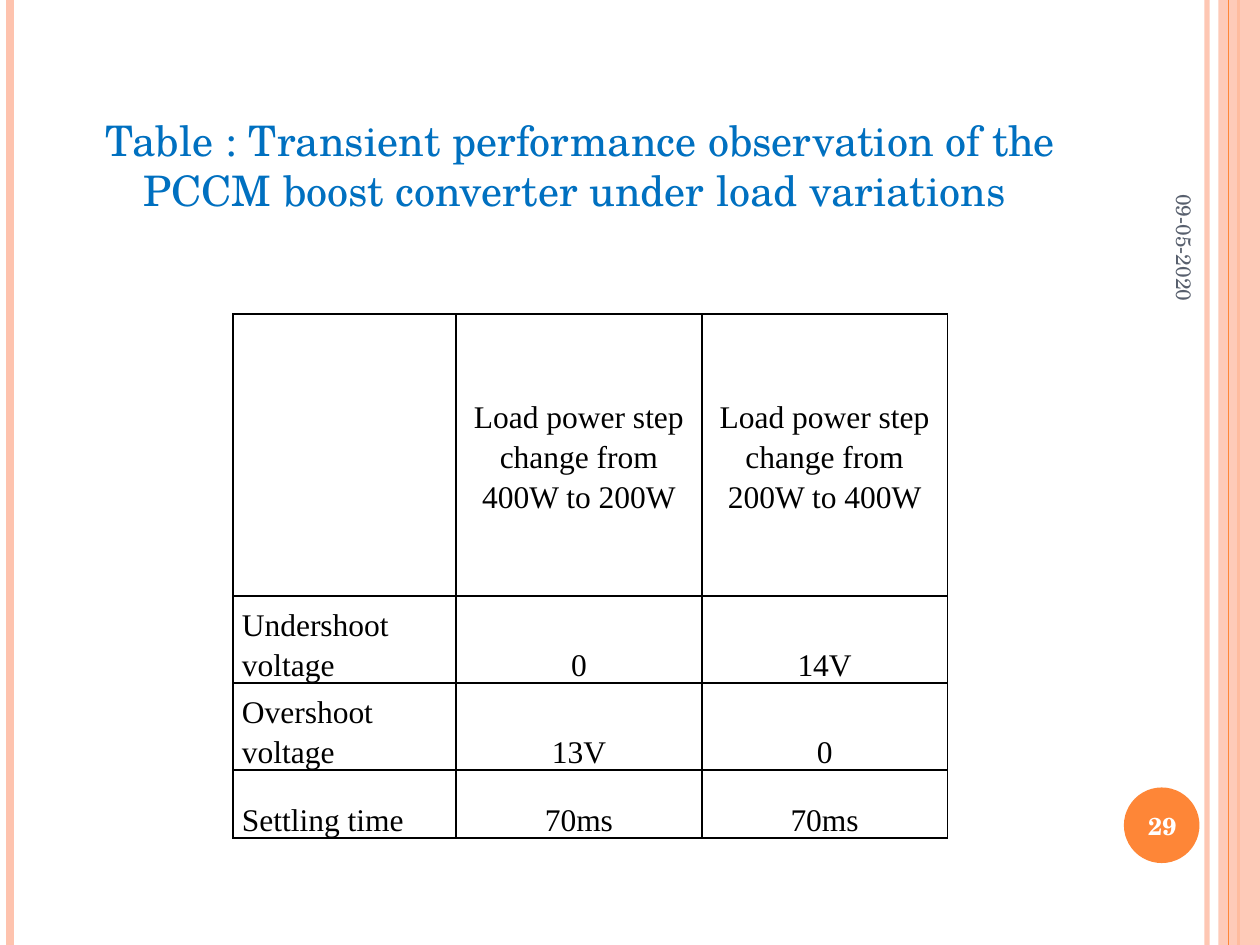
from dataclasses import dataclass

from lxml import etree
from pptx import Presentation
from pptx.dml.color import RGBColor
from pptx.enum.shapes import MSO_CONNECTOR, MSO_SHAPE
from pptx.enum.text import MSO_ANCHOR, MSO_AUTO_SIZE, PP_ALIGN
from pptx.oxml.ns import qn
from pptx.util import Inches, Pt

STRAIGHT = MSO_CONNECTOR.STRAIGHT
RECTANGLE, OVAL = MSO_SHAPE.RECTANGLE, MSO_SHAPE.OVAL
LEFT, CENTER, RIGHT = PP_ALIGN.LEFT, PP_ALIGN.CENTER, PP_ALIGN.RIGHT
MIDDLE, BOTTOM = MSO_ANCHOR.MIDDLE, MSO_ANCHOR.BOTTOM
NO_AUTOFIT = MSO_AUTO_SIZE.NONE
TITLE_ONLY = 5


@dataclass(frozen=True)
class Theme:
    """Colours, fonts and type sizes of the deck."""
    peach: str = "FEC3AE"
    orange: str = "FE8637"
    blue: str = "0070C0"
    slate: str = "575F6D"
    black: str = "000000"
    white: str = "FFFFFF"
    heading_font: str = "TeX Gyre Schola"
    table_font: str = "Times New Roman"
    title_size: int = 24
    table_size: int = 18
    number_size: int = 14
    date_size: int = 12


THEME = Theme()
ROWS = [
    ["", "Load power step change from 400W to 200W", "Load power step change from 200W to 400W"],
    ["Undershoot voltage", "0", "14V"],
    ["Overshoot voltage", "13V", "0"],
    ["Settling time", "70ms", "70ms"],
]


def set_opacity(element, percent):
    """Make every plain colour inside the element partly transparent."""
    for color in element.iter(qn("a:srgbClr")):
        etree.SubElement(color, qn("a:alpha"), val=str(percent * 1000))


def write(frame, text, font, size, color, align, anchor, bold=False):
    """Put one formatted paragraph into a text frame and return it."""
    frame.text = text
    frame.word_wrap = True
    frame.vertical_anchor = anchor
    para = frame.paragraphs[0]
    para.alignment = align
    for span in para.runs:
        span.font.name = font
        span.font.size = Pt(size)
        span.font.bold = bold
        span.font.color.rgb = RGBColor.from_string(color)
    return para


def add_stripe(page, x, top, height, color, width, opacity=100):
    """Draw one vertical stripe."""
    stripe = page.shapes.add_connector(
        STRAIGHT, Inches(x), Inches(top), Inches(x), Inches(top + height))
    stripe.line.color.rgb = RGBColor.from_string(color)
    stripe.line.width = Pt(width)
    if opacity < 100:
        set_opacity(stripe.line._get_or_add_ln(), opacity)
    etree.SubElement(stripe._element.spPr, qn("a:effectLst"))


def add_solid(page, kind, box, color):
    """Draw a filled shape without an outline."""
    shape = page.shapes.add_shape(kind, *map(Inches, box))
    shape.shadow.inherit = False
    shape.fill.solid()
    shape.fill.fore_color.rgb = RGBColor.from_string(color)
    shape.line.fill.background()
    return shape


def add_frame(page, box):
    """Draw the stripes along both edges of the page."""
    left, top, width, height = box
    right = left + width
    add_stripe(page, right - 0.42, top, height, THEME.peach, 3, 93)
    add_stripe(page, left + 0.08, top, height, THEME.peach, 4.5)
    add_stripe(page, right - 0.17, top, height, THEME.orange, 1.5)
    band = add_solid(page, RECTANGLE, (right - 0.33, top, 0.33, height), THEME.peach)
    set_opacity(band._element.spPr, 87)
    add_stripe(page, right - 0.25, top, height, THEME.orange, 0.75)


def add_title(page, box, text):
    """Place the title placeholder in the box."""
    title = page.shapes.title
    title.left, title.top, title.width, title.height = map(Inches, box)
    write(title.text_frame, text, THEME.heading_font, THEME.title_size,
          THEME.blue, CENTER, MIDDLE)
    title.text_frame.auto_size = NO_AUTOFIT


def add_date(page, box, text):
    """Place the date, turned to read downwards."""
    date = page.shapes.add_textbox(*map(Inches, box))
    date.rotation = 90
    write(date.text_frame, text, THEME.heading_font, THEME.date_size,
          THEME.slate, RIGHT, MIDDLE)


def add_page_number(page, box, text):
    """Place the page number on its round badge."""
    left, top, width, height = box
    add_solid(page, OVAL, box, THEME.orange)
    number = page.shapes.add_textbox(
        Inches(left - 0.03), Inches(top + 0.02), Inches(width + 0.07), Inches(height - 0.03))
    write(number.text_frame, text, THEME.heading_font, THEME.number_size,
          THEME.white, CENTER, MIDDLE, bold=True)


def add_borders(cell):
    """Give a cell a thin black border on all sides."""
    properties = cell._tc.get_or_add_tcPr()
    for place, side in enumerate(("a:lnL", "a:lnR", "a:lnT", "a:lnB")):
        line = etree.Element(qn(side), w=str(Pt(1)))
        fill = etree.SubElement(line, qn("a:solidFill"))
        etree.SubElement(fill, qn("a:srgbClr"), val=THEME.black)
        properties.insert(place, line)


def add_results(page, box, rows):
    """Place the table of results in the box."""
    left, top, width, height = box
    table = page.shapes.add_table(len(rows), len(rows[0]), *map(Inches, box)).table
    table.first_row = table.horz_banding = False
    value_width, row_height = 1.95, 0.54
    for index, column in enumerate(table.columns):
        column.width = Inches(value_width if index else width - 2 * value_width)
    for index, row in enumerate(table.rows):
        row.height = Inches(row_height if index else height - 3 * row_height)
    for row_index, texts in enumerate(rows):
        for column_index, text in enumerate(texts):
            cell = table.cell(row_index, column_index)
            para = write(cell.text_frame, text, THEME.table_font, THEME.table_size,
                         THEME.black, CENTER if column_index else LEFT, MIDDLE)
            para.line_spacing = 1.15
            cell.vertical_anchor = BOTTOM if row_index else MIDDLE
            cell.margin_left = cell.margin_right = Inches(0.07)
            cell.margin_top = cell.margin_bottom = 0
            cell.fill.background()
            add_borders(cell)


def main():
    """Build the deck and save it."""
    deck = Presentation()
    deck.slide_width, deck.slide_height = Inches(10), Inches(7.5)
    page = deck.slides.add_slide(deck.slide_layouts[TITLE_ONLY])
    add_frame(page, (0, 0, 10, 7.5))
    add_date(page, (8.3, 1.18, 2.2, 0.42), "09-05-2020")
    add_page_number(page, (8.92, 6.25, 0.6, 0.6), "29")
    add_results(page, (1.85, 2.49, 5.67, 3.86), ROWS)
    add_title(page, (0.43, 0.85, 8.35, 0.91),
              "Table : Transient performance observation of the PCCM boost converter "
              "under load variations ")
    deck.save("out.pptx")


if __name__ == "__main__":
    main()
